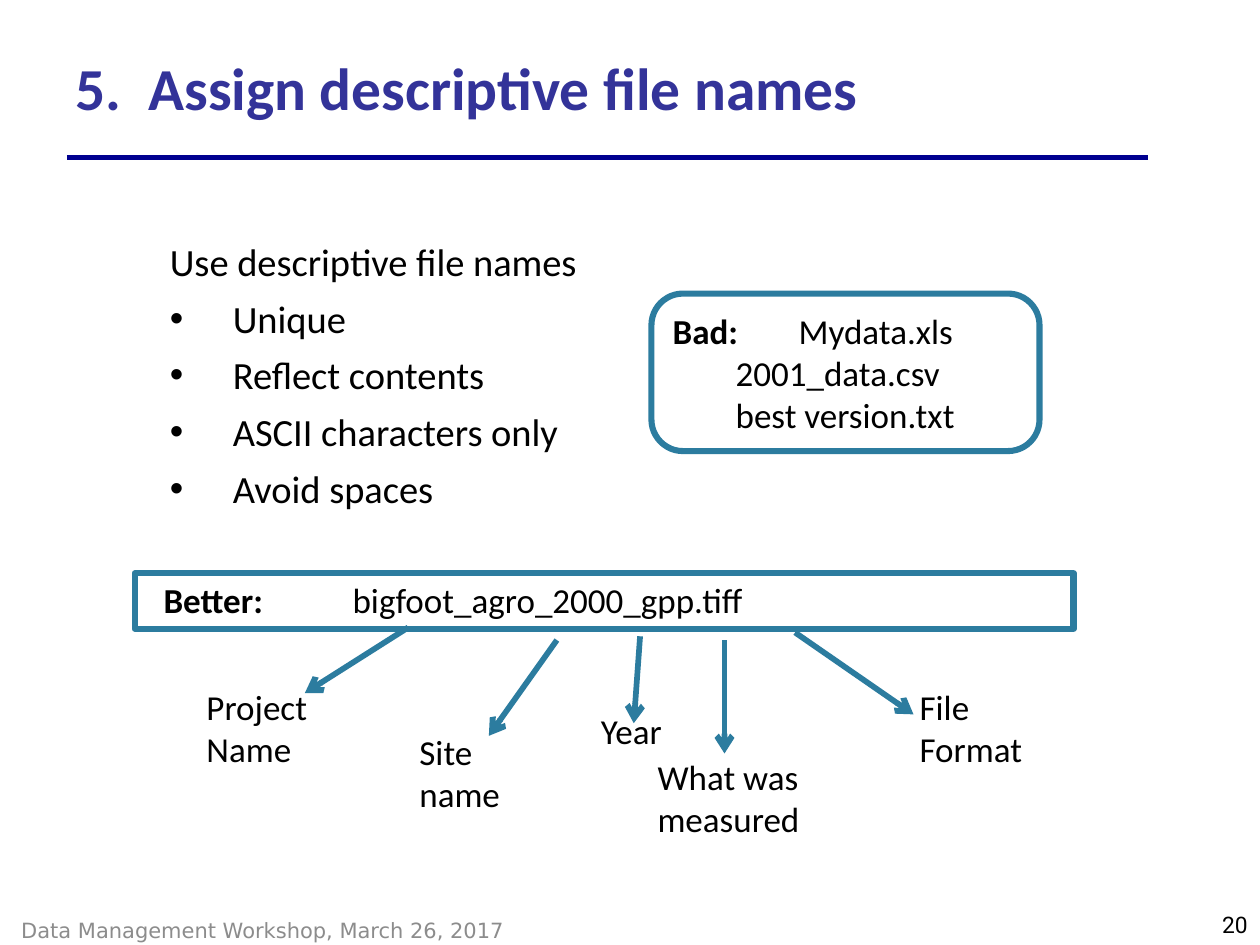
from dataclasses import dataclass

from lxml import etree
from pptx import Presentation
from pptx.dml.color import RGBColor
from pptx.enum.shapes import MSO_CONNECTOR, MSO_SHAPE
from pptx.enum.text import MSO_ANCHOR, PP_ALIGN
from pptx.oxml.ns import qn
from pptx.util import Inches, Pt

STRAIGHT = MSO_CONNECTOR.STRAIGHT
ROUNDED = MSO_SHAPE.ROUNDED_RECTANGLE
TOP, MIDDLE = MSO_ANCHOR.TOP, MSO_ANCHOR.MIDDLE
LEFT, RIGHT = PP_ALIGN.LEFT, PP_ALIGN.RIGHT


@dataclass(frozen=True)
class Theme:
    body_font: str = "Calibri"
    footer_font: str = "DejaVu Sans"
    number_font: str = "Roboto"
    ink: str = "000000"
    heading: str = "333399"
    rule: str = "000090"
    accent: str = "2C7C9F"
    muted: str = "8C8C8C"
    title_size: int = 34
    list_size: int = 22
    label_size: int = 20
    footer_size: int = 12
    number_size: int = 13
    rule_width: float = 2.75
    arrow_width: float = 3.25
    frame_width: float = 3.5


class SlideBuilder:
    def __init__(self, page, theme):
        self.page = page
        self.theme = theme

    def span(self, para, text, size, bold=False, color=None, font=None):
        span = para.add_run()
        span.text = text
        span.font.size = Pt(size)
        span.font.bold = bold
        span.font.name = font or self.theme.body_font
        span.font.color.rgb = RGBColor.from_string(color or self.theme.ink)

    def hang(self, para, indent):
        properties = para._p.get_or_add_pPr()
        properties.set("marL", str(Inches(indent)))
        properties.set("indent", str(-Inches(indent)))
        return properties

    def title(self, number, text, left, top, width, height):
        box = self.page.shapes.title
        box.left, box.top = Inches(left), Inches(top)
        box.width, box.height = Inches(width), Inches(height)
        box.text_frame.vertical_anchor = MIDDLE
        para = box.text_frame.paragraphs[0]
        para.alignment = LEFT
        self.hang(para, 0.58)
        self.span(para, f"{number}\t{text}", self.theme.title_size, True, self.theme.heading)

    def frame(self, left, top, width, height, rounding):
        box = self.page.shapes.add_shape(
            ROUNDED, Inches(left), Inches(top), Inches(width), Inches(height))
        box.adjustments[0] = rounding
        box.shadow.inherit = False
        box.fill.background()
        box.line.color.rgb = RGBColor.from_string(self.theme.accent)
        box.line.width = Pt(self.theme.frame_width)

    def text_box(self, left, top, width, height, lines, size=None, color=None,
                 font=None, anchor=TOP, align=LEFT):
        box = self.page.shapes.add_textbox(
            Inches(left), Inches(top), Inches(width), Inches(height))
        frame = box.text_frame
        frame.word_wrap = True
        frame.vertical_anchor = anchor
        for index, spans in enumerate(lines):
            para = frame.add_paragraph() if index else frame.paragraphs[0]
            para.alignment = align
            for text, bold in spans:
                self.span(para, text, size or self.theme.label_size, bold, color, font)
        return frame

    def bullet_list(self, left, top, width, height, heading, items):
        lines = [[(text, False)] for text in (heading, *items)]
        frame = self.text_box(left, top, width, height, lines, self.theme.list_size)
        for index, para in enumerate(frame.paragraphs):
            para.space_after = Pt(6)
            if index:
                properties = self.hang(para, 0.5)
                etree.SubElement(properties, qn("a:buFont")).set("typeface", "Arial")
                etree.SubElement(properties, qn("a:buChar")).set("char", "•")

    def line(self, start, end, color, width, arrow=False):
        connector = self.page.shapes.add_connector(
            STRAIGHT, *(Inches(value) for value in (*start, *end)))
        connector.line.color.rgb = RGBColor.from_string(color)
        connector.line.width = Pt(width)
        if arrow:
            outline = connector.line._get_or_add_ln()
            etree.SubElement(outline, qn("a:tailEnd")).set("type", "arrow")
        etree.SubElement(connector._element.spPr, qn("a:effectLst"))


def main():
    deck = Presentation()
    deck.slide_width, deck.slide_height = Inches(10), Inches(7.5)
    page = deck.slides.add_slide(deck.slide_layouts[5])
    theme = Theme()
    builder = SlideBuilder(page, theme)

    builder.title("5.", "Assign descriptive file names", 0.5, 0.17, 8.5, 1.03)
    builder.line((0.53, 1.25), (9.11, 1.25), theme.rule, theme.rule_width)
    builder.bullet_list(
        1.25, 1.84, 4.67, 2.29, "Use descriptive file names",
        ["Unique", "Reflect contents", "ASCII characters only", "Avoid spaces"])

    builder.frame(5.17, 2.33, 3.08, 1.25, 0.2)
    builder.text_box(5.24, 2.41, 5.05, 1.11, [
        [("Bad: \t", True), ("Mydata.xls", False)],
        [("\t2001_data.csv", False)],
        [("\tbest version.txt", False)],
    ])

    builder.frame(1.07, 4.55, 7.45, 0.44, 0)
    builder.text_box(1.2, 4.54, 5.45, 2.46, [
        [("Better:", True), ("\t\tbigfoot_agro_2000_gpp.tiff", False)],
    ])

    name_parts = [
        ("Project Name", (1.54, 5.39, 1.38, 0.77), (3.24, 4.98), (2.42, 5.5)),
        ("Site name", (3.23, 5.75, 1.05, 0.77), (4.42, 5.08), (3.88, 5.84)),
        ("Year", (4.67, 5.58, 0.83, 0.44), (5.08, 5.05), (5.03, 5.74)),
        ("What was measured", (5.12, 5.95, 1.85, 0.77), (5.75, 5.08), (5.75, 5.98)),
        ("File Format", (7.2, 5.39, 1.05, 0.77), (6.31, 5.02), (7.25, 5.67)),
    ]
    for label, place, start, end in name_parts:
        builder.text_box(*place, [[(label, False)]])
        builder.line(start, end, theme.accent, theme.arrow_width, arrow=True)

    builder.text_box(
        0.07, 7.18, 5.68, 0.4, [[("Data Management Workshop, March 26, 2017", False)]],
        theme.footer_size, theme.muted, theme.footer_font, MIDDLE)
    builder.text_box(
        7.67, 7.17, 2.33, 0.33, [[("20", False)]],
        theme.number_size, theme.ink, theme.number_font, MIDDLE, RIGHT)

    deck.save("out.pptx")


if __name__ == "__main__":
    main()
